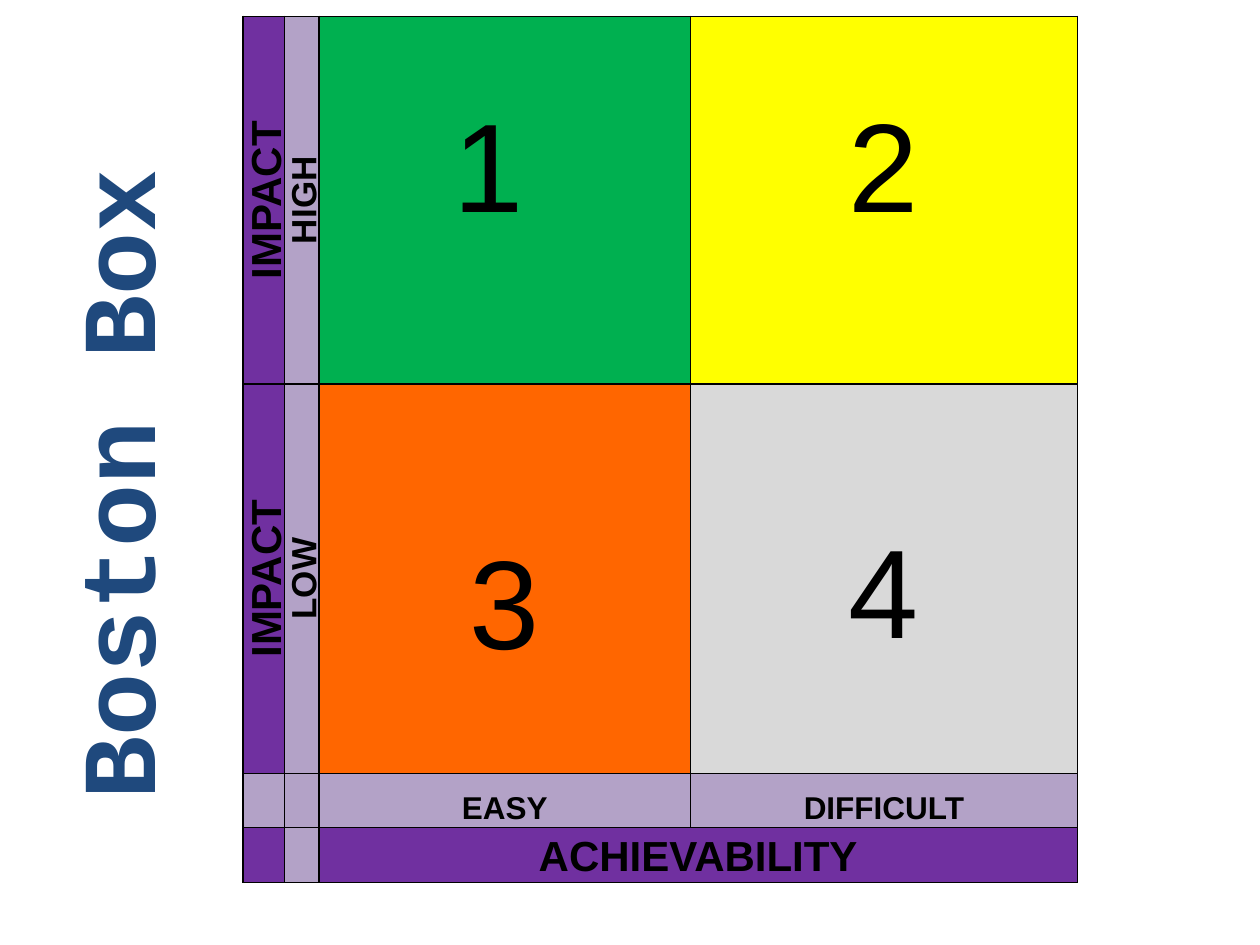
"""Build a one-page Boston Box of impact against achievability."""
from lxml import etree
from pptx import Presentation
from pptx.dml.color import RGBColor
from pptx.enum.text import MSO_ANCHOR, PP_ALIGN
from pptx.oxml.ns import qn
from pptx.util import Cm, Pt

CENTER = PP_ALIGN.CENTER
MIDDLE = MSO_ANCHOR.MIDDLE
BLACK = RGBColor(0x00, 0x00, 0x00)
NAVY = RGBColor(0x1F, 0x49, 0x7D)
PURPLE = RGBColor(0x70, 0x30, 0xA0)
LILAC = RGBColor(0xB3, 0xA2, 0xC7)
GREEN = RGBColor(0x00, 0xB0, 0x50)
YELLOW = RGBColor(0xFF, 0xFF, 0x00)
ORANGE = RGBColor(0xFF, 0x66, 0x00)
GREY = RGBColor(0xD9, 0xD9, 0xD9)


def write(frame, text, size, bold=True, font="Arial", color=BLACK):
    para = frame.paragraphs[0]
    para.alignment = CENTER
    span = para.add_run()
    span.text = text
    span.font.size = Pt(size)
    span.font.bold = bold
    span.font.name = font
    span.font.color.rgb = color


def add_borders(cell):
    properties = cell._tc.get_or_add_tcPr()
    for side in ("a:lnL", "a:lnR", "a:lnT", "a:lnB"):
        line = etree.SubElement(properties, qn(side), w=str(Pt(1)))
        fill = etree.SubElement(line, qn("a:solidFill"))
        etree.SubElement(fill, qn("a:srgbClr"), val=str(BLACK))


deck = Presentation()
deck.slide_width = Cm(25.4)
deck.slide_height = Cm(19.05)
page = deck.slides.add_slide(deck.slide_layouts[5])

title = page.shapes.title
title.left, title.top, title.width, title.height = Cm(-9.14), Cm(8.18), Cm(22.86), Cm(3.18)
title.rotation = 270
title.text_frame.vertical_anchor = MIDDLE
write(title.text_frame, "Boston Box", 60, font="Courier New", color=NAVY)

column_widths = [0.84, 0.69, 7.49, 7.8]
row_heights = [7.41, 7.85, 1.09, 1.11]
matrix = page.shapes.add_table(
    4, 4, Cm(4.9), Cm(0.33), Cm(sum(column_widths)), Cm(sum(row_heights))
).table
matrix.first_row = False
matrix.horz_banding = False
for column, width in zip(matrix.columns, column_widths):
    column.width = Cm(width)
for row, height in zip(matrix.rows, row_heights):
    row.height = Cm(height)

fills = [
    [PURPLE, LILAC, GREEN, YELLOW],
    [PURPLE, LILAC, ORANGE, GREY],
    [LILAC, LILAC, LILAC, LILAC],
    [PURPLE, LILAC, PURPLE, PURPLE],
]
for row, colors in zip(matrix.rows, fills):
    for cell, color in zip(row.cells, colors):
        add_borders(cell)
        cell.fill.solid()
        cell.fill.fore_color.rgb = color
        cell.margin_left = cell.margin_right = Cm(0.1)
        cell.margin_top = cell.margin_bottom = 0
matrix.cell(3, 2).merge(matrix.cell(3, 3))

side_labels = [(0, 0, "IMPACT", 24), (0, 1, "HIGH", 20), (1, 0, "IMPACT", 24), (1, 1, "LOW", 20)]
for row, column, text, size in side_labels:
    cell = matrix.cell(row, column)
    cell._tc.get_or_add_tcPr().set("vert", "vert270")
    write(cell.text_frame, text, size)

level_labels = [
    (0, 2, "1", 72, False, 1.65),
    (0, 3, "2", 72, False, 1.65),
    (1, 2, "3", 72, False, 3.06),
    (1, 3, "4", 72, False, 2.84),
    (2, 2, "EASY", 18, True, 0.35),
    (2, 3, "DIFFICULT", 18, True, 0.35),
    (3, 2, "ACHIEVABILITY", 24, True, 0.13),
]
for row, column, text, size, bold, gap in level_labels:
    cell = matrix.cell(row, column)
    cell.margin_top = Cm(gap)
    write(cell.text_frame, text, size, bold=bold)
matrix.cell(0, 2).margin_right = Cm(0.75)

deck.save("out.pptx")
